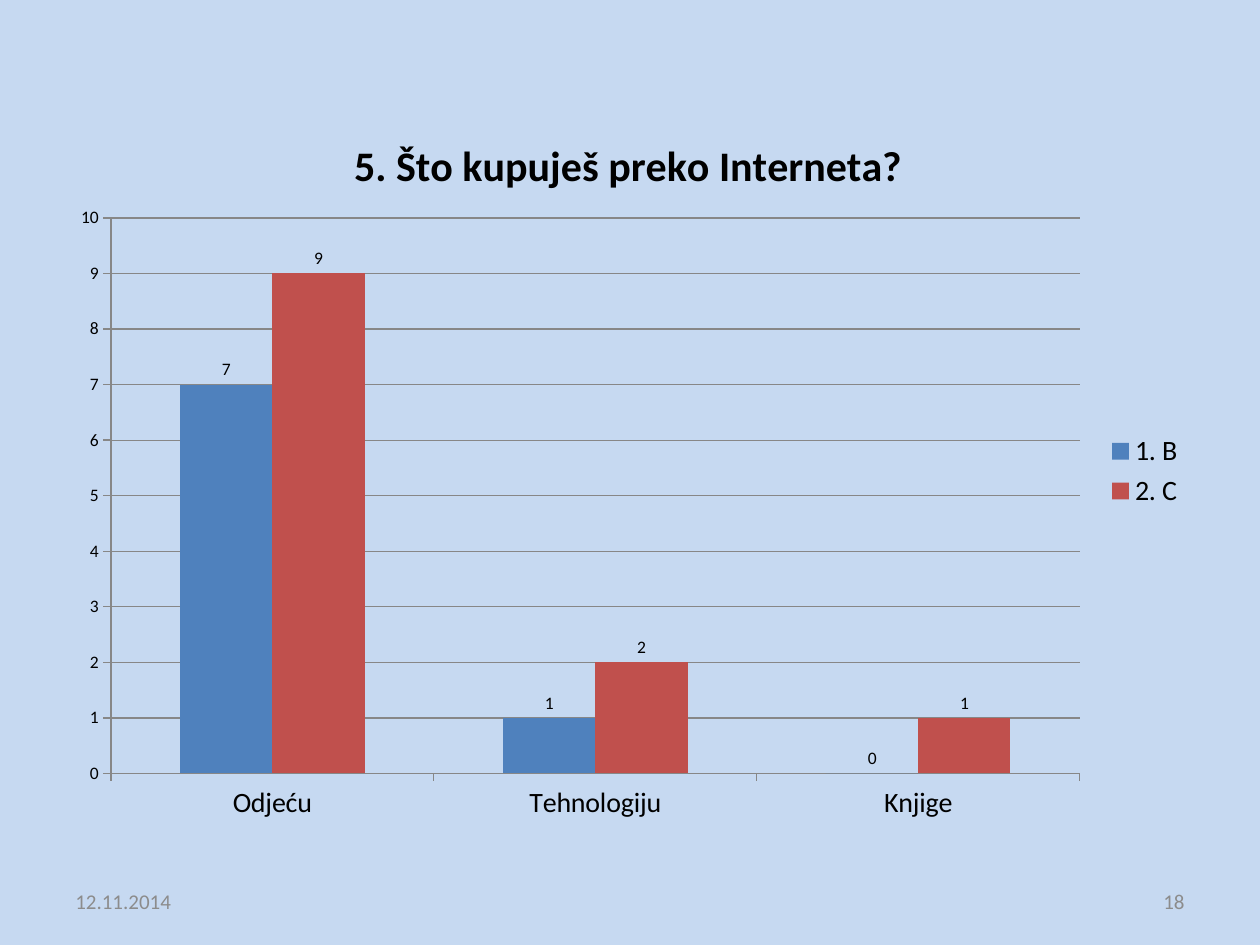
from lxml import etree
from pptx import Presentation
from pptx.chart.data import CategoryChartData as Data
from pptx.dml.color import RGBColor as RGB
from pptx.enum.chart import XL_CHART_TYPE as Kind, XL_LABEL_POSITION as Spot
from pptx.enum.chart import XL_LEGEND_POSITION as Side, XL_TICK_MARK as Tick
from pptx.enum.text import MSO_ANCHOR as Anchor, PP_ALIGN as Align
from pptx.oxml.ns import qn
from pptx.util import Inches, Pt

FONT = "Calibri"
TITLE = "5. Što kupuješ preko Interneta?"
GROUPS = ["Odjeću", "Tehnologiju", "Knjige"]
SERIES = [("1. B", (7, 1, 0), "4F81BD"), ("2. C", (9, 2, 1), "C0504D")]
FOOTER = [("12.11.2014", 0.5, Align.LEFT), ("18", 7.17, Align.RIGHT)]
BOX = (0.47, 0.86, 9.03, 5.76)
PLOT = (0.88, 1.73, 7.69, 4.41)


def color(fill, code):
    fill.solid()
    fill.fore_color.rgb = RGB.from_string(code)


def style(font, size, code="000000", bold=False):
    for key, value in {"name": FONT, "size": Pt(size), "bold": bold}.items():
        setattr(font, key, value)
    color(font.fill, code)


def place_plot(chart):
    """Fix the inner plot area, given in slide inches, within the chart."""
    area = chart.plots[0]._element.getparent()
    for old in area.findall(qn("c:layout")):
        area.remove(old)
    layout = etree.Element(qn("c:layout"))
    area.insert(0, layout)
    manual = etree.SubElement(layout, qn("c:manualLayout"))
    x, y, w, h = BOX
    px, py, pw, ph = PLOT
    parts = [("layoutTarget", "inner"), ("xMode", "edge"), ("yMode", "edge"),
             ("x", (px - x) / w), ("y", (py - y) / h), ("w", pw / w), ("h", ph / h)]
    for tag, value in parts:
        etree.SubElement(manual, qn("c:" + tag)).set("val", str(value))


def add_chart(slide):
    data = Data()
    data.categories = GROUPS
    for name, values, _ in SERIES:
        data.add_series(name, values)
    chart = slide.shapes.add_chart(
        Kind.COLUMN_CLUSTERED, *map(Inches, BOX), data).chart
    style(chart.font, 10)

    chart.has_title = True
    frame = chart.chart_title.text_frame
    frame.text = TITLE
    style(frame.paragraphs[0].runs[0].font, 24, bold=True)
    chart.chart_title.include_in_layout = False

    chart.has_legend = True
    chart.legend.position = Side.RIGHT
    chart.legend.include_in_layout = False
    style(chart.legend.font, 16)

    plot = chart.plots[0]
    plot.gap_width, plot.overlap, plot.vary_by_categories = 150, 0, False
    plot.has_data_labels = True
    labels = plot.data_labels
    labels.show_value = True
    labels.position = Spot.OUTSIDE_END
    style(labels.font, 10)
    for series, (_, _, code) in zip(plot.series, SERIES):
        color(series.format.fill, code)

    across, up = chart.category_axis, chart.value_axis
    up.minimum_scale, up.maximum_scale, up.major_unit = 0, 10, 1
    up.has_major_gridlines = True
    for axis, size in ((across, 16), (up, 10)):
        axis.major_tick_mark = Tick.OUTSIDE
        style(axis.tick_labels.font, size)
    for line in (across.format.line, up.format.line, up.major_gridlines.format.line):
        color(line.fill, "878787")
        line.width = Pt(0.75)
    place_plot(chart)


def add_footer(slide):
    for text, left, align in FOOTER:
        box = slide.shapes.add_textbox(*map(Inches, (left, 6.95, 2.33, 0.4)))
        frame = box.text_frame
        frame.word_wrap = True
        frame.vertical_anchor = Anchor.MIDDLE
        para = frame.paragraphs[0]
        para.text, para.alignment = text, align
        style(para.runs[0].font, 12, "8C8C8C")


def main():
    deck = Presentation()
    deck.slide_width, deck.slide_height = Inches(10), Inches(7.5)
    slide = deck.slides.add_slide(deck.slide_layouts[6])
    color(slide.background.fill, "C6D9F1")
    add_chart(slide)
    add_footer(slide)
    deck.save("out.pptx")


if __name__ == "__main__":
    main()
